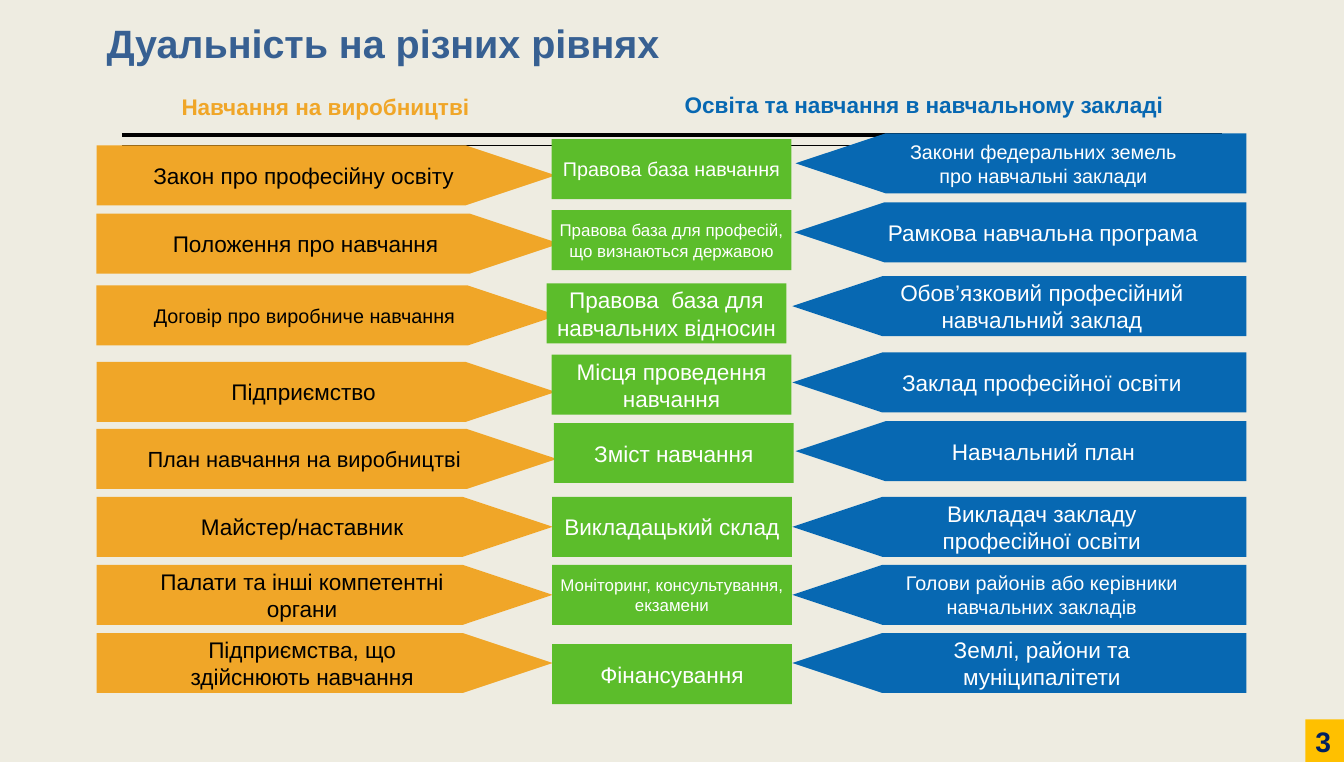
from lxml import etree
from pptx import Presentation
from pptx.dml.color import RGBColor
from pptx.enum.shapes import MSO_CONNECTOR, MSO_SHAPE
from pptx.enum.text import MSO_ANCHOR, PP_ALIGN
from pptx.oxml.ns import qn
from pptx.util import Pt

LINE, RECT, ARROW = MSO_CONNECTOR.STRAIGHT, MSO_SHAPE.RECTANGLE, MSO_SHAPE.PENTAGON
TOP, MID, LOW = MSO_ANCHOR.TOP, MSO_ANCHOR.MIDDLE, MSO_ANCHOR.BOTTOM
LEFT, MIDDLE = PP_ALIGN.LEFT, PP_ALIGN.CENTER

BEIGE = RGBColor(0xEE, 0xEC, 0xE1)
BLACK = RGBColor(0, 0, 0)
WHITE = RGBColor(0xFF, 0xFF, 0xFF)
SLATE = RGBColor(0x37, 0x60, 0x92)
ORANGE = RGBColor(0xF0, 0xA6, 0x28)
BLUE = RGBColor(0x07, 0x68, 0xB2)
GREEN = RGBColor(0x5C, 0xBD, 0x2B)
GOLD = RGBColor(0xFF, 0xC0, 0x00)
NAVY = RGBColor(0x00, 0x20, 0x60)

ROW_H = 42.5
WORK_X = 68.4
BASE_W = 169.9
SCHOOL_END = 883.4

# top, width, text size, text
WORK = [
    (103, 325.4, 16, "Закон про професійну освіту"),
    (151.4, 328.3, 16, "Положення про навчання"),
    (202.3, 326.9, 14, "Договір про виробниче навчання"),
    (256.5, 325.4, 16, "Підприємство"),
    (304, 326.2, 15.5, "План навчання на виробництві"),
    (352.1, 323.3, 16, "Майстер/наставник"),
    (400.3, 323.3, 16, "Палати та інші компетентні\nоргани"),
    (448.6, 323.3, 16, "Підприємства, що\nздійснюють навчання"),
]
# top, left, text size, text
SCHOOL = [
    (94.5, 563.8, 14, "Закони федеральних земель\nпро навчальні заклади"),
    (143.4, 563, 16, "Рамкова навчальна програма"),
    (195.7, 561.6, 16, "Обов’язковий професійний\nнавчальний заклад"),
    (249.8, 561.6, 16, "Заклад професійної освіти"),
    (298.5, 563.8, 16, "Навчальний план"),
    (352.1, 561.6, 16, "Викладач закладу\nпрофесійної освіти"),
    (400.3, 561.6, 14, "Голови районів або керівники\nнавчальних закладів"),
    (448.6, 561.6, 16, "Землі, райони та\nмуніципалітети"),
]
BASE = [
    (98.6, 391, 14, "Правова база навчання"),
    (149, 391, 12, "Правова база для професій,\nщо визнаються державою"),
    (200.9, 387.4, 16, "Правова  база для\nнавчальних відносин"),
    (251.3, 391, 16, "Місця проведення\nнавчання"),
    (299.8, 392.6, 16, "Зміст навчання"),
    (352.1, 391.3, 16, "Викладацький склад"),
    (400.3, 391.3, 12, "Моніторинг, консультування,\nекзамени"),
    (456.5, 391.3, 16, "Фінансування"),
]


class Board:
    """Holds the slide and its font, and adds elements measured in points."""

    def __init__(self, slide, font):
        self.slide = slide
        self.font = font
        self.shapes = slide.shapes

    def letter(self, shape, text, size, color, bold=False, align=MIDDLE,
               anchor=MID, wrap=False, space=None):
        """Put styled text into a shape."""
        frame = shape.text_frame
        frame.word_wrap = wrap
        frame.vertical_anchor = anchor
        frame.text = text
        look = {"name": self.font, "size": Pt(size), "bold": bold}
        for para in frame.paragraphs:
            para.alignment = align
            para.line_spacing = space
            for key, value in look.items():
                setattr(para.font, key, value)
            para.font.color.rgb = color

    def label(self, box, text, size, color, **style):
        shape = self.shapes.add_textbox(*map(Pt, box))
        self.letter(shape, text, size, color, bold=True, **style)

    def block(self, kind, box, fill, text, size, color, flip=False, **style):
        shape = self.shapes.add_shape(kind, *map(Pt, box))
        shape.shadow.inherit = False
        shape.fill.solid()
        shape.fill.fore_color.rgb = fill
        shape.line.fill.background()
        if kind == ARROW:
            shape.adjustments[0] = 1.5
        if flip:
            shape.element.spPr.find(qn("a:xfrm")).set("flipH", "1")
        self.letter(shape, text, size, color, **style)

    def rule(self, left, right, top, width):
        line = self.shapes.add_connector(LINE, Pt(left), Pt(top), Pt(right), Pt(top))
        line.line.color.rgb = BLACK
        line.line.width = Pt(width)
        etree.SubElement(line.element.spPr, qn("a:effectLst"))


def main():
    deck = Presentation()
    deck.slide_width, deck.slide_height = Pt(952.5), Pt(540)
    slide = deck.slides.add_slide(deck.slide_layouts[6])
    slide.background.fill.solid()
    slide.background.fill.fore_color.rgb = BEIGE
    board = Board(slide, "Arial")

    for top, width in ((95.8, 3), (103, 1)):
        board.rule(86.4, 866.2, top, width)
    board.label((68.4, 13, 733.7, 38.2), "Дуальність на різних рівнях", 28, SLATE,
                align=LEFT, anchor=LOW, wrap=True, space=0.9)
    board.label((120.2, 62.6, 221, 26.6), "Навчання на виробництві", 16, ORANGE,
                anchor=TOP)
    board.label((470.9, 61.2, 367.9, 26.6),
                "Освіта та навчання в навчальному закладі", 16, BLUE, anchor=TOP)

    for top, width, size, text in WORK:
        board.block(ARROW, (WORK_X, top, width, ROW_H), ORANGE, text, size, BLACK)
    for top, left, size, text in SCHOOL:
        board.block(ARROW, (left, top, SCHOOL_END - left, ROW_H), BLUE, text, size,
                    WHITE, flip=True)
    for top, left, size, text in BASE:
        board.block(RECT, (left, top, BASE_W, ROW_H), GREEN, text, size, WHITE)

    board.block(RECT, (925.2, 509.8, 27.3, 30.2), GOLD, "3", 20, NAVY,
                bold=True, align=LEFT, anchor=TOP, wrap=True)
    deck.save("out.pptx")


if __name__ == "__main__":
    main()
